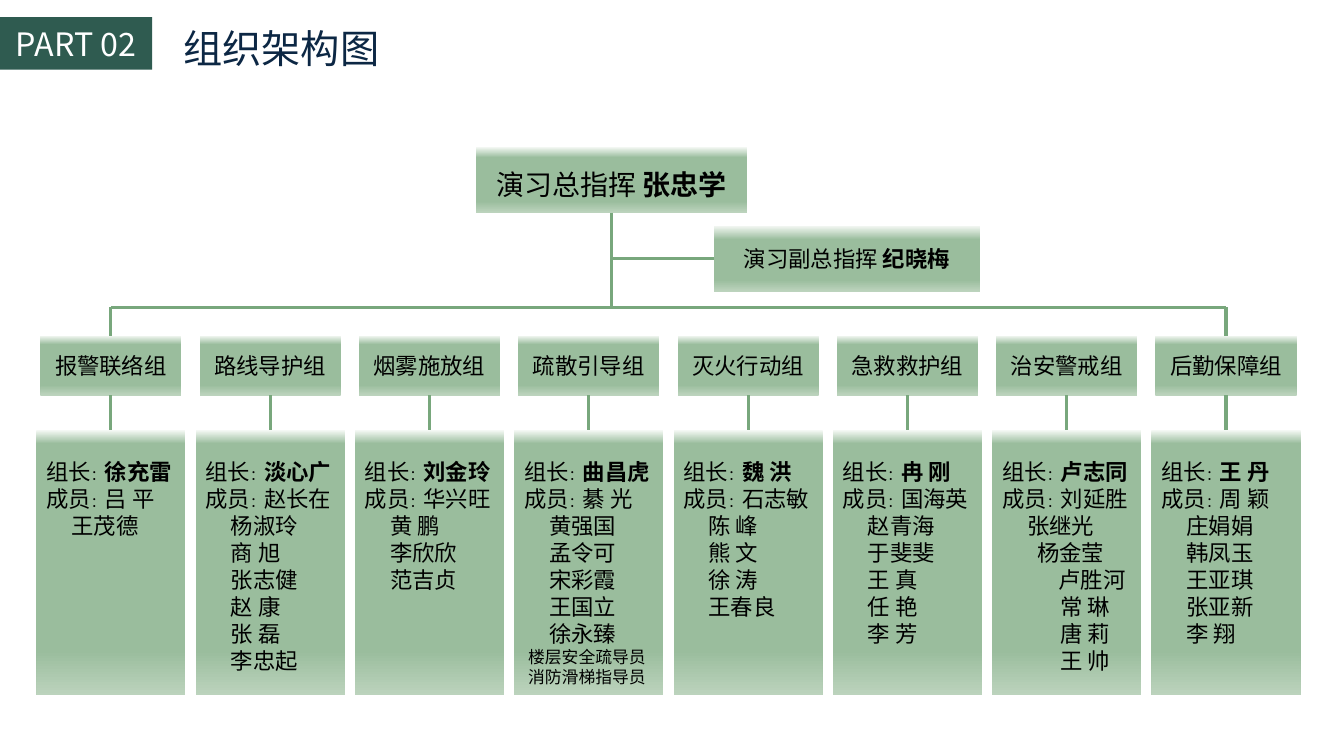
from lxml.etree import SubElement
from pptx import Presentation
from pptx.dml.color import RGBColor
from pptx.enum.shapes import MSO_CONNECTOR as Link, MSO_SHAPE as Shape
from pptx.enum.text import MSO_ANCHOR as Anchor, MSO_AUTO_SIZE as AutoSize, PP_ALIGN as Align
from pptx.oxml.ns import qn
from pptx.util import Inches, Pt

WHITE = RGBColor(0xFF, 0xFF, 0xFF)
BLACK = RGBColor(0x00, 0x00, 0x00)
NAVY = RGBColor(0x0C, 0x27, 0x44)
PINE = RGBColor(0x2F, 0x5B, 0x50)
MIST = RGBColor(0xF4, 0xF8, 0xF4)
SAGE = RGBColor(0x9A, 0xBD, 0x9D)
PALE = RGBColor(0xBC, 0xD3, 0xBD)
LEAF = RGBColor(0x78, 0xA7, 0x7C)

TOP, LEFT, BOTTOM = 0, 1, 2
FIRST_COLUMN, PITCH = 4, 15.8
MEMBER_INDENT = 2.5

GROUPS = [
    ("报警联络组", "徐充雷", "吕 平", ["王茂德"], []),
    ("路线导护组", "淡心广", "赵长在", ["杨淑玲", "商 旭", "张志健", "赵 康", "张 磊", "李忠起"], []),
    ("烟雾施放组", "刘金玲", "华兴旺", ["黄 鹏", "李欣欣", "范吉贞"], []),
    ("疏散引导组", "曲昌虎", "綦 光", ["黄强国", "孟令可", "宋彩霞", "王国立", "徐永臻"],
     ["楼层安全疏导员", "消防滑梯指导员"]),
    ("灭火行动组", "魏 洪", "石志敏", ["陈 峰", "熊 文", "徐 涛", "王春良"], []),
    ("急救救护组", "冉 刚", "国海英", ["赵青海", "于斐斐", "王 真", "任 艳", "李 芳"], []),
    ("治安警戒组", "卢志同", "刘延胜", ["张继光", "杨金莹", "卢胜河", "常 琳", "唐 莉", "王 帅"], []),
    ("后勤保障组", "王 丹", "周 颖", ["庄娟娟", "韩凤玉", "王亚琪", "张亚新", "李 翔"], []),
]
STEPPED_INDENTS = {"杨金莹": 3.5, "卢胜河": 5.6, "常 琳": 5.8, "唐 莉": 5.8, "王 帅": 5.8}


class OrgChart:
    """Draws the chart's elements on a grid of tenth-inch columns and rows."""

    cell = Inches(0.1)
    typeface = "Noto Sans CJK SC"

    def __init__(self, deck):
        self.slide = deck.slides.add_slide(deck.slide_layouts[5])

    def cells(self, *counts):
        return [round(count * self.cell) for count in counts]

    def style(self, font, size, color, bold=False):
        font.name, font.size, font.bold = self.typeface, Pt(size), bold
        font.color.rgb = color
        font._element.find(qn("a:latin")).addnext(
            SubElement(font._element, qn("a:ea"), typeface=self.typeface))

    def set_text(self, paragraph, runs, color=BLACK, align=Align.LEFT, indent=0):
        paragraph.alignment = align
        paragraph.line_spacing = Pt(1.2 * max(size for _, size, _ in runs))
        if indent:
            paragraph._p.get_or_add_pPr().set("marL", str(self.cells(indent)[0]))
        for words, size, bold in runs:
            run = paragraph.add_run()
            run.text = words
            if len(runs) > 1:
                self.style(run.font, size, color, bold)
        if len(runs) == 1:
            self.style(paragraph.font, runs[0][1], color, runs[0][2])

    def title(self, words, area):
        heading = self.slide.shapes.title
        heading.left, heading.top, heading.width, heading.height = self.cells(*area)
        frame = heading.text_frame
        frame.word_wrap, frame.auto_size = False, AutoSize.NONE
        frame.vertical_anchor = Anchor.MIDDLE
        self.set_text(frame.paragraphs[0], [(words, 28, False)], NAVY)

    def panel(self, area, inset_top=0):
        panel = self.slide.shapes.add_shape(Shape.RECTANGLE, *self.cells(*area))
        panel.shadow.inherit = False
        panel.line.fill.background()
        frame = panel.text_frame
        frame.word_wrap = True
        frame.vertical_anchor = Anchor.MIDDLE
        frame.margin_left, frame.margin_right, frame.margin_top = self.cells(1, 0.5, inset_top)
        frame.margin_bottom = 0
        return panel

    def tag(self, words, area):
        tag = self.panel(area)
        tag.fill.solid()
        tag.fill.fore_color.rgb = PINE
        tag.text_frame.margin_left = tag.text_frame.margin_right
        self.set_text(tag.text_frame.paragraphs[0], [(words, 23, False)], WHITE, Align.CENTER)

    def shaded(self, area, glow, inset_top=0):
        panel = self.panel(area, inset_top)
        panel.fill.gradient()
        panel.fill.gradient_angle = 270
        stops = panel._element.spPr.find(".//" + qn("a:gsLst"))
        for stop in list(stops):
            stops.remove(stop)
        for share, color in ((0, MIST), (glow, SAGE), (83, SAGE), (100, PALE)):
            stop = SubElement(stops, qn("a:gs"), pos=str(share * 1000))
            SubElement(stop, qn("a:srgbClr"), val=str(color))
        return panel

    def post(self, runs, area, glow, inset_top=0):
        post = self.shaded(area, glow, inset_top)
        post.text_frame.margin_left = post.text_frame.margin_right
        self.set_text(post.text_frame.paragraphs[0], runs, align=Align.CENTER)
        return post

    def roster(self, area, leader, first, members, duties):
        roster = self.shaded(area, 5, 2.8)
        frame = roster.text_frame
        frame.vertical_anchor = Anchor.TOP
        lines = [([("组长", 16, False), ("：", 10, False), (leader, 16, True)], 0),
                 ([("成员", 16, False), ("：", 10, False), (first, 16, False)], 0)]
        lines += [([(name, 16, False)], STEPPED_INDENTS.get(name, MEMBER_INDENT))
                  for name in members]
        lines += [([(duty, 12, False)], 0.4) for duty in duties]
        for index, (runs, indent) in enumerate(lines):
            paragraph = frame.add_paragraph() if index else frame.paragraphs[0]
            self.set_text(paragraph, runs, indent=indent)
        return roster

    def link(self, start, end, begin=None, finish=None):
        link = self.slide.shapes.add_connector(Link.STRAIGHT, *self.cells(*start, *end))
        link.line.color.rgb, link.line.width = LEAF, Pt(2.25)
        SubElement(link._element.spPr, qn("a:effectLst"))
        if begin:
            link.begin_connect(*begin)
        if finish:
            link.end_connect(*finish)


def main():
    deck = Presentation()
    deck.slide_width, deck.slide_height = Inches(13.33), Inches(7.5)
    chart = OrgChart(deck)
    chart.title("组织架构图", (17.2, 1.9, 21.5, 5.7))
    chart.tag("PART 02", (0, 1.7, 15.1, 5.2))

    commander = chart.post([("演习总指挥 ", 20, False), ("张忠学", 20, True)],
                           (47.2, 14.6, 26.9, 6.5), 16, 0.8)
    deputy = chart.post([("演习副总指挥 ", 16, False), ("纪晓梅", 16, True)],
                        (70.8, 22.4, 26.4, 6.5), 21)

    labels = []
    for index, (name, *people) in enumerate(GROUPS):
        column = FIRST_COLUMN + index * PITCH
        middle = column + 7
        label = chart.post([(name, 16, False)], (column, 33.3, 14, 5.9), 15)
        roster = chart.roster((column - 0.4, 42.7, 14.8, 26.3), *people)
        chart.link((middle, 39.2), (middle, 42.7), (label, BOTTOM), (roster, TOP))
        labels.append((label, middle))

    trunk, bus = 60.65, 30.5
    (first, bus_start), (last, bus_end) = labels[0], labels[-1]
    chart.link((bus_start, bus), (bus_end, bus))
    chart.link((trunk, 21.1), (trunk, bus), begin=(commander, BOTTOM))
    chart.link((trunk, 25.65), (70.8, 25.65), finish=(deputy, LEFT))
    for label, middle in ((first, bus_start), (last, bus_end)):
        chart.link((middle, bus), (middle, 33.3), finish=(label, TOP))
    deck.save("out.pptx")


if __name__ == "__main__":
    main()
